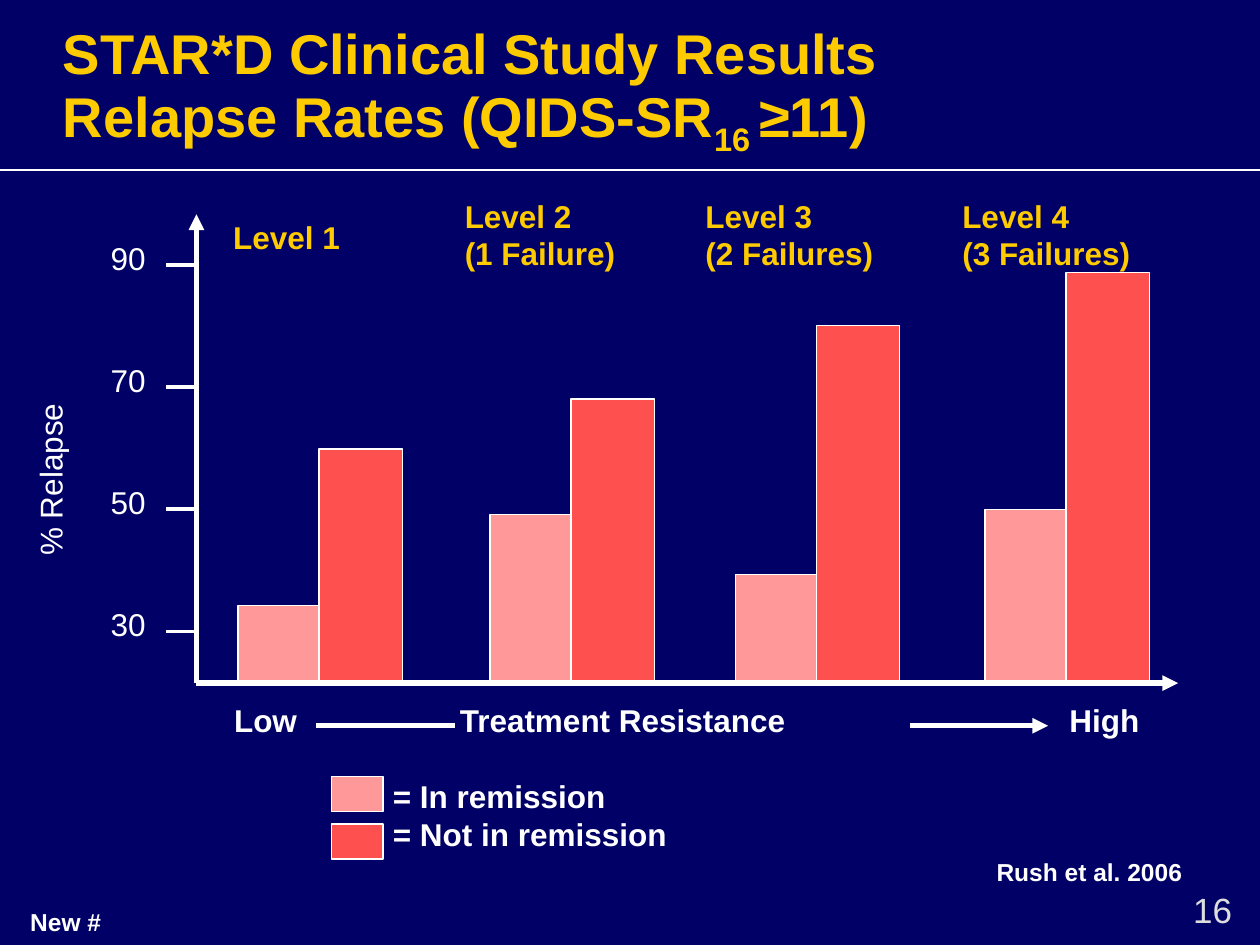
from dataclasses import dataclass

from lxml import etree
from pptx import Presentation
from pptx.dml.color import RGBColor
from pptx.enum.shapes import MSO_CONNECTOR, MSO_SHAPE
from pptx.enum.text import MSO_ANCHOR, MSO_AUTO_SIZE, PP_ALIGN
from pptx.oxml.ns import qn
from pptx.util import Cm, Pt

STRAIGHT = MSO_CONNECTOR.STRAIGHT
RECTANGLE = MSO_SHAPE.RECTANGLE
TOP, BOTTOM = MSO_ANCHOR.TOP, MSO_ANCHOR.BOTTOM
LEFT, RIGHT = PP_ALIGN.LEFT, PP_ALIGN.RIGHT
FIT_SHAPE = MSO_AUTO_SIZE.SHAPE_TO_FIT_TEXT
RIGHT_SIDE = 3


@dataclass(frozen=True)
class Theme:
    font: str = "Arial"
    background: RGBColor = RGBColor(0x00, 0x00, 0x66)
    white: RGBColor = RGBColor(0xFF, 0xFF, 0xFF)
    gold: RGBColor = RGBColor(0xFE, 0xCA, 0x00)
    grey: RGBColor = RGBColor(0xDD, 0xDD, 0xDD)
    remission: RGBColor = RGBColor(0xFF, 0x99, 0x99)
    no_remission: RGBColor = RGBColor(0xFF, 0x50, 0x50)
    title_size: int = 32
    number_size: int = 20
    body_size: int = 18
    note_size: int = 14


THEME = Theme()


@dataclass(frozen=True)
class Box:
    """A frame in centimetres."""
    left: float
    top: float
    width: float
    height: float

    def lengths(self) -> tuple:
        return Cm(self.left), Cm(self.top), Cm(self.width), Cm(self.height)


@dataclass(frozen=True)
class Style:
    size: int = THEME.body_size
    color: RGBColor = THEME.white
    bold: bool = True


@dataclass(frozen=True)
class Level:
    """One treatment level: its heading, bars and relapse rates."""
    lines: tuple
    heading: Box
    bar_left: float
    remission: float
    no_remission: float


BODY = Style()
AXIS_TEXT = Style(bold=False)
HEADING = Style(color=THEME.gold)
TITLE = Style(THEME.title_size, THEME.gold)
NOTE = Style(THEME.note_size)
PAGE_NUMBER = Style(THEME.number_size, THEME.grey, False)

LEVELS = (
    Level(("Level 1",), Box(4.45, 4.27, 3.86, 0.99), 4.8, 34.3, 59.9),
    Level(("Level 2", "(1 Failure)"), Box(9.12, 3.84, 4.52, 1.7), 9.88, 49.2, 68.1),
    Level(("Level 3", "(2 Failures)"), Box(13.97, 3.84, 5.03, 1.7), 14.83, 39.3, 80.1),
    Level(("Level 4", "(3 Failures)"), Box(19.15, 3.84, 4.34, 1.7), 19.86, 50, 88.8),
)

# Vertical scale of the diagram
TICKS = (30, 50, 70, 90)
TICK_30_Y = 12.73
CM_PER_PERCENT = 0.123
BAR_BOTTOM = 13.72
AXIS_X, AXIS_Y = 3.96, 13.77


def percent_y(percent: float) -> float:
    return TICK_30_Y - (percent - TICKS[0]) * CM_PER_PERCENT


def add_run(paragraph, text: str, style: Style):
    run = paragraph.add_run()
    run.text = text
    run.font.name = THEME.font
    run.font.size = Pt(style.size)
    run.font.bold = style.bold
    run.font.color.rgb = style.color
    return run


def add_text(slide, box: Box, lines: tuple, style: Style, wrap: bool = False,
             inset: bool = True, align=LEFT, fit: bool = True):
    shape = slide.shapes.add_textbox(*box.lengths())
    frame = shape.text_frame
    frame.word_wrap = wrap
    frame.vertical_anchor = TOP
    if fit:
        frame.auto_size = FIT_SHAPE
    if not inset:
        frame.margin_left = frame.margin_right = 0
        frame.margin_top = frame.margin_bottom = 0
    for index, line in enumerate(lines):
        paragraph = frame.add_paragraph() if index else frame.paragraphs[0]
        paragraph.alignment = align
        add_run(paragraph, line, style)
    return shape


def add_line(slide, start: tuple, end: tuple, width: float, arrow: bool = False):
    line = slide.shapes.add_connector(STRAIGHT, *map(Cm, start + end))
    line.line.color.rgb = THEME.white
    line.line.width = Pt(width)
    properties = line._element.spPr
    if arrow:
        etree.SubElement(properties.find(qn("a:ln")), qn("a:tailEnd"), type="triangle")
    etree.SubElement(properties, qn("a:effectLst"))
    return line


def add_block(slide, box: Box, color: RGBColor) -> None:
    block = slide.shapes.add_shape(RECTANGLE, *box.lengths())
    block.shadow.inherit = False
    block.fill.solid()
    block.fill.fore_color.rgb = color
    block.line.color.rgb = THEME.white
    block.line.width = Pt(0.75)


def add_bar(slide, left: float, width: float, percent: float, color: RGBColor) -> None:
    top = percent_y(percent)
    add_block(slide, Box(left, top, width, BAR_BOTTOM - top), color)


def add_title(slide) -> None:
    box = add_text(slide, Box(1.27, 0.15, 22.86, 3.18), ("STAR*D Clinical Study Results",),
                   TITLE, wrap=True, inset=False, fit=False)
    box.text_frame.vertical_anchor = BOTTOM
    box.text_frame.margin_bottom = Cm(0.15)
    paragraph = box.text_frame.paragraphs[0]
    paragraph.line_spacing = Pt(41)
    paragraph.add_line_break()
    add_run(paragraph, "Relapse Rates (QIDS-SR", TITLE)
    subscript = add_run(paragraph, "16 ", TITLE)
    subscript.font._element.set("baseline", "-25000")
    add_run(paragraph, "≥11)", TITLE)


def main() -> None:
    deck = Presentation()
    deck.slide_width, deck.slide_height = Cm(25.4), Cm(19.05)
    slide = deck.slides.add_slide(deck.slide_layouts[6])
    slide.background.fill.solid()
    slide.background.fill.fore_color.rgb = THEME.background

    # Title and rule
    add_line(slide, (0, 3.43), (25.4, 3.43), 1)
    add_title(slide)

    # Vertical axis with ticks
    axis_title = add_text(slide, Box(-1.17, 8.51, 4.62, 1.27), ("% Relapse",), AXIS_TEXT)
    axis_title.rotation = 270
    for tick in TICKS:
        y = percent_y(tick)
        add_line(slide, (3.35, y), (AXIS_X, y), 2.25)
        add_text(slide, Box(1.98, y - 0.66, 1.45, 1.27), (str(tick),), AXIS_TEXT)
    add_line(slide, (AXIS_X, AXIS_Y), (AXIS_X, 4.32), 3, arrow=True)
    add_line(slide, (AXIS_X, AXIS_Y), (23.75, AXIS_Y), 3, arrow=True)

    # Levels: bar pairs and headings
    for level in LEVELS:
        add_bar(slide, level.bar_left, 1.65, level.remission, THEME.remission)
        add_bar(slide, level.bar_left + 1.63, 1.68, level.no_remission, THEME.no_remission)
        add_text(slide, level.heading, level.lines, HEADING, wrap=True)

    # Resistance scale
    add_text(slide, Box(4.47, 14, 1.78, 1.02), ("Low",), BODY)
    resistance = add_text(slide, Box(9.02, 14, 9.32, 1.26), ("Treatment Resistance",), BODY)
    add_text(slide, Box(21.31, 14, 1.93, 1.02), ("High",), BODY)
    add_line(slide, (6.38, 14.63), (9.17, 14.63), 3)
    to_high = add_line(slide, (18.34, 14.63), (21.13, 14.63), 3, arrow=True)
    to_high.begin_connect(resistance, RIGHT_SIDE)

    # Legend
    for top, color in ((15.65, THEME.remission), (16.61, THEME.no_remission)):
        add_block(slide, Box(6.68, top, 1.04, 0.71), color)
    add_text(slide, Box(7.67, 15.54, 6.05, 1.78),
             ("= In remission", "= Not in remission"), BODY)

    # Source, note and page number
    add_text(slide, Box(20.09, 17.27, 5.3, 1.12), ("Rush et al. 2006",), NOTE,
             wrap=True, inset=False)
    add_text(slide, Box(0.36, 18.16, 2.82, 0.81), ("New #",), NOTE, wrap=True)
    number = add_text(slide, Box(23.01, 17.98, 1.83, 0.71), ("16",), PAGE_NUMBER,
                      wrap=True, inset=False, align=RIGHT, fit=False)
    number.text_frame.paragraphs[0].line_spacing = 0.95

    deck.save("out.pptx")


if __name__ == "__main__":
    main()
